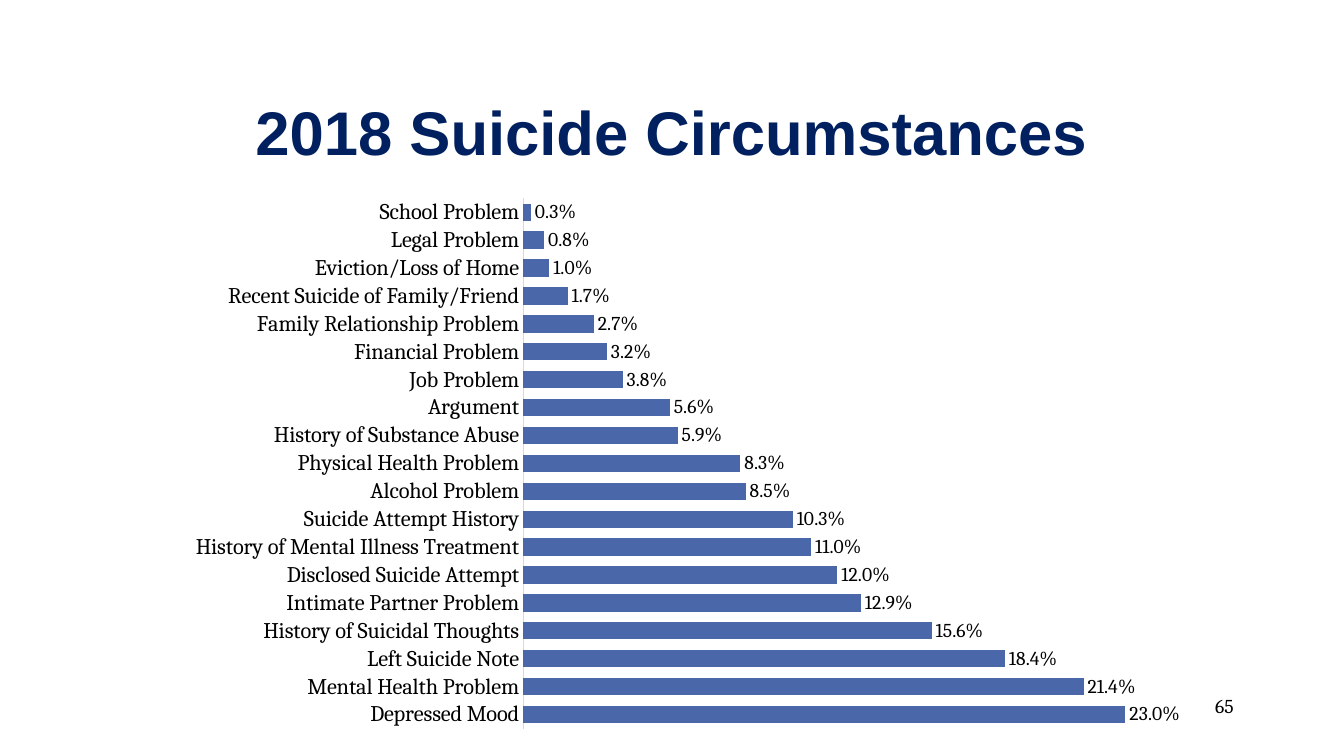
import pptx
import pptx.chart.data
import pptx.dml.color
import pptx.enum.chart
import pptx.enum.text
import pptx.oxml
import pptx.oxml.ns
import pptx.util

Cm = pptx.util.Cm
Pt = pptx.util.Pt
ALIGN = pptx.enum.text.PP_ALIGN

HUES = {
    "title": "002060",
    "text": "000000",
    "bar": "4967A9",
    "axis": "D9D9D9",
}

RATES = [
    ("Depressed Mood", 0.23),
    ("Mental Health Problem", 0.214),
    ("Left Suicide Note", 0.184),
    ("History of Suicidal Thoughts", 0.156),
    ("Intimate Partner Problem", 0.129),
    ("Disclosed Suicide Attempt", 0.12),
    ("History of Mental Illness Treatment", 0.11),
    ("Suicide Attempt History", 0.103),
    ("Alcohol Problem", 0.085),
    ("Physical Health Problem", 0.083),
    ("History of Substance Abuse", 0.059),
    ("Argument", 0.056),
    ("Job Problem", 0.038),
    ("Financial Problem", 0.032),
    ("Family Relationship Problem", 0.027),
    ("Recent Suicide of Family/Friend", 0.017),
    ("Eviction/Loss of Home", 0.01),
    ("Legal Problem", 0.008),
    ("School Problem", 0.003),
]


def tint(name):
    return pptx.dml.color.RGBColor.from_string(HUES[name])


def style(font, face, size, hue, bold=False):
    font.name = face
    font.size = Pt(size)
    font.bold = bold
    font.color.rgb = tint(hue)


def add_title(slide, text):
    title = slide.shapes.title
    title.left, title.top = Cm(2.54), Cm(1.7)
    title.width, title.height = Cm(28.78), Cm(3.18)
    frame = title.text_frame
    frame.text = text
    frame.word_wrap = True
    frame.vertical_anchor = pptx.enum.text.MSO_ANCHOR.MIDDLE
    line = frame.paragraphs[0]
    line.alignment = ALIGN.CENTER
    style(line.font, "Arial", 44, "title", True)


def add_page(slide, text):
    box = slide.shapes.add_textbox(Cm(24.28), Cm(17.35), Cm(7.06), Cm(1.27))
    frame = box.text_frame
    frame.word_wrap = True
    frame.text = text
    line = frame.paragraphs[0]
    line.alignment = ALIGN.RIGHT
    style(line.font, "Cambria", 14, "text")


def place_plot(chart, left, top, width, height):
    area = chart.plots[0]._element.getparent()
    for old in area.findall(pptx.oxml.ns.qn("c:layout")):
        area.remove(old)
    sides = zip("xywh", (left, top, width, height))
    parts = "".join(f'<c:{side} val="{size}"/>' for side, size in sides)
    area.insert(0, pptx.oxml.parse_xml(
        f'<c:layout {pptx.oxml.ns.nsdecls("c")}><c:manualLayout>'
        '<c:layoutTarget val="inner"/><c:xMode val="edge"/><c:yMode val="edge"/>'
        f'{parts}</c:manualLayout></c:layout>'))


def add_bars(slide, rates):
    data = pptx.chart.data.CategoryChartData(number_format="0.0%")
    data.categories = [name for name, rate in rates]
    data.add_series("Series 1", [rate for name, rate in rates])
    chart = slide.shapes.add_chart(
        pptx.enum.chart.XL_CHART_TYPE.BAR_CLUSTERED,
        Cm(4.42), Cm(4.72), Cm(25.78), Cm(13.92), data).chart
    chart.has_legend = False
    chart.has_title = False
    style(chart.font, "Cambria", 10, "text")

    names = chart.category_axis
    names.major_tick_mark = pptx.enum.chart.XL_TICK_MARK.NONE
    names.format.line.color.rgb = tint("axis")
    names.format.line.width = Pt(0.75)
    style(names.tick_labels.font, "Cambria", 16, "text")

    scale = chart.value_axis
    scale.visible = False
    scale.has_major_gridlines = False
    scale.minimum_scale = 0
    scale.maximum_scale = 0.25
    scale.tick_labels.number_format = "0.00%"
    scale.tick_labels.number_format_is_linked = False

    plot = chart.plots[0]
    plot.gap_width = 61
    plot.vary_by_categories = False
    fill = plot.series[0].format.fill
    fill.solid()
    fill.fore_color.rgb = tint("bar")

    plot.has_data_labels = True
    labels = plot.data_labels
    labels.show_value = True
    labels.number_format = "0.0%"
    labels.number_format_is_linked = False
    labels.position = pptx.enum.chart.XL_LABEL_POSITION.OUTSIDE_END
    style(labels.font, "Cambria", 14, "text")
    place_plot(chart, 0.34, 0.02, 0.64, 0.96)


def main():
    deck = pptx.Presentation()
    deck.slide_width, deck.slide_height = Cm(33.87), Cm(19.05)
    slide = deck.slides.add_slide(deck.slide_layouts[5])
    add_page(slide, "65")
    add_bars(slide, RATES)
    add_title(slide, "2018 Suicide Circumstances")
    deck.save("out.pptx")


if __name__ == "__main__":
    main()
